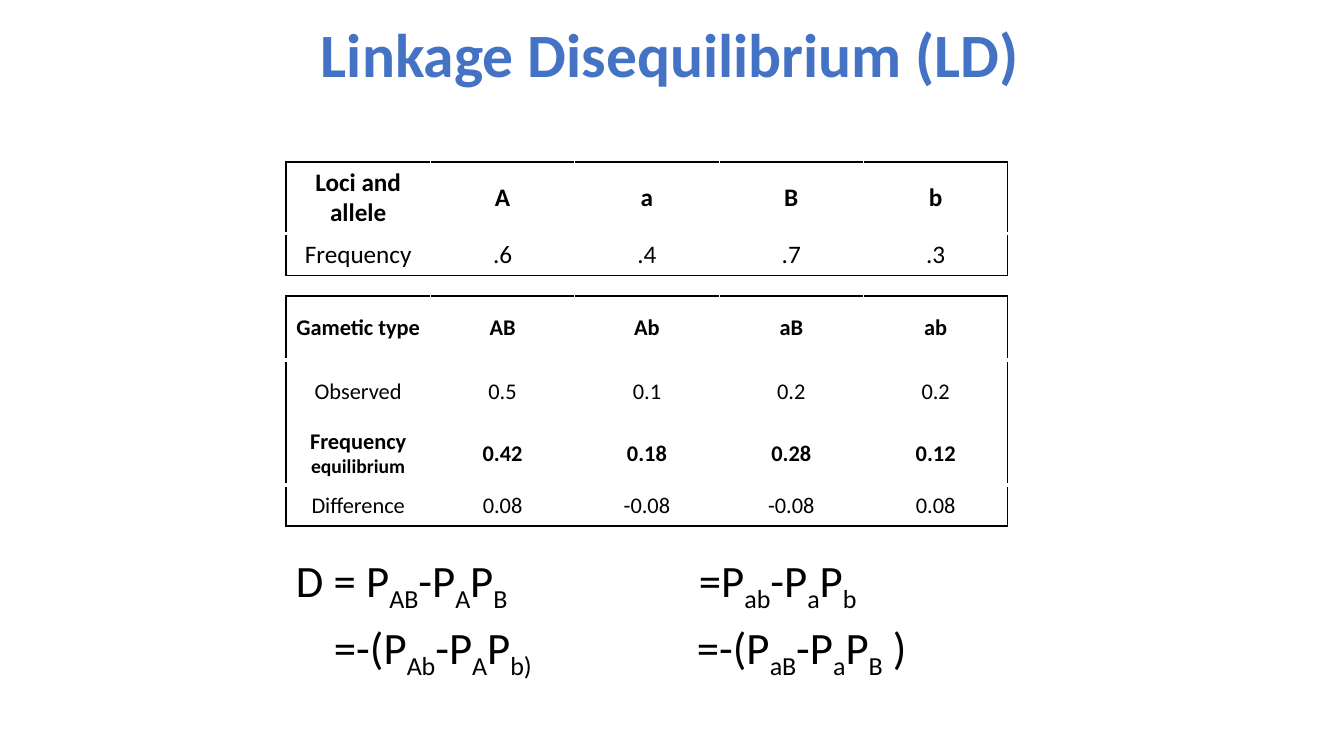
"""Build the linkage disequilibrium slide with its frequency tables and formulas."""
from lxml.etree import SubElement
from pptx import Presentation
from pptx.dml.color import RGBColor
from pptx.enum.text import MSO_ANCHOR, PP_ALIGN
from pptx.oxml.ns import qn
from pptx.util import Emu, Pt

SCALE = 914400 / 100.8
FONT = "Calibri"
COLORS = {"title": "4472C4", "text": "000000", "line": "000000", "gap": "FFFFFF"}

TITLE = "Linkage Disequilibrium (LD)"
TABLE_LEFT, TABLE_WIDTH = 286, 722
TABLES = [
    {"top": 162, "heights": (70, 42), "size": 18, "top_line": True, "bottom_line": True,
     "rows": [("Loci and allele", "A", "a", "B", "b"),
              ("Frequency", ".6", ".4", ".7", ".3")]},
    {"top": 296, "heights": (64, 64), "size": 16, "top_line": True, "bottom_line": False,
     "rows": [("Gametic type", "AB", "Ab", "aB", "ab"),
              ("Observed", "0.5", "0.1", "0.2", "0.2")]},
    {"top": 422, "heights": (63, 41), "size": 16, "top_line": False, "bottom_line": True,
     "rows": [("Frequency |equilibrium", "0.42", "0.18", "0.28", "0.12"),
              ("Difference", "0.08", "-0.08", "-0.08", "0.08")]},
]
SMALL_LABEL_SIZE = 14

FORMULAS = [
    {"left": 286, "top": 548, "height": 74, "tab": 403,
     "parts": ("D = P", "AB", "-P", "A", "P", "B", "\t=P", "ab", "-P", "a", "P", "b")},
    {"left": 324, "top": 615, "height": 77, "tab": 363,
     "parts": ("=-(P", "Ab", "-P", "A", "P", "b)", "\t=-(P", "aB", "-P", "a", "P", "B", " )")},
]


def px(length):
    return Emu(round(length * SCALE))


def style(font, size, color, bold=False):
    font.name = FONT
    font.size = Pt(size)
    font.bold = bold
    font.color.rgb = RGBColor.from_string(COLORS[color])


def add_border(cell, side, color, points):
    line = SubElement(cell._tc.get_or_add_tcPr(), qn(f"a:ln{side}"), w=str(Pt(points)))
    fill = SubElement(line, qn("a:solidFill"))
    SubElement(fill, qn("a:srgbClr"), val=COLORS[color])


def add_frequency_table(slide, content):
    rows = content["rows"]
    last_row, last_column = len(rows) - 1, len(rows[0]) - 1
    table = slide.shapes.add_table(
        len(rows), len(rows[0]), px(TABLE_LEFT), px(content["top"]),
        px(TABLE_WIDTH), px(sum(content["heights"]))).table
    table.first_row = table.horz_banding = False
    for column in table.columns:
        column.width = px(TABLE_WIDTH / len(rows[0]))
    for row_index, values in enumerate(rows):
        table.rows[row_index].height = px(content["heights"][row_index])
        for column_index, value in enumerate(values):
            cell = table.cell(row_index, column_index)
            cell.vertical_anchor = MSO_ANCHOR.MIDDLE
            outlined = {
                "L": column_index == 0,
                "R": column_index == last_column,
                "T": row_index == 0 and content["top_line"],
                "B": row_index == last_row and content["bottom_line"],
            }
            for side, black in outlined.items():
                thick = side == "B" and row_index == 0
                add_border(cell, side, "line" if black else "gap", 3 if thick else 1)
            cell.fill.background()
            paragraph = cell.text_frame.paragraphs[0]
            paragraph.alignment = PP_ALIGN.CENTER
            style(paragraph.font, content["size"], "text", row_index == 0)
            label, _, small_label = value.partition("|")
            paragraph.add_run().text = label
            if small_label:
                run = paragraph.add_run()
                run.text = small_label
                run.font.size = Pt(SMALL_LABEL_SIZE)


def add_formula(slide, content):
    box = slide.shapes.add_textbox(
        px(content["left"]), px(content["top"]), px(TABLE_WIDTH), px(content["height"]))
    box.text_frame.word_wrap = True
    paragraph = box.text_frame.paragraphs[0]
    paragraph.space_before = Pt(6.4)
    tabs = SubElement(paragraph._p.get_or_add_pPr(), qn("a:tabLst"))
    SubElement(tabs, qn("a:tab"), pos=str(px(content["tab"])), algn="l")
    style(paragraph.font, 32, "text")
    for index, part in enumerate(content["parts"]):
        run = paragraph.add_run()
        run.text = part
        if index % 2:
            run.font._element.set("baseline", "-25000")


def main():
    presentation = Presentation()
    presentation.slide_width, presentation.slide_height = px(1344), px(756)
    slide = presentation.slides.add_slide(presentation.slide_layouts[5])

    title = slide.shapes.title
    title.left, title.top, title.width, title.height = px(217), px(0), px(907), px(115)
    title.text_frame.text = TITLE
    title.text_frame.vertical_anchor = MSO_ANCHOR.MIDDLE
    paragraph = title.text_frame.paragraphs[0]
    paragraph.alignment = PP_ALIGN.CENTER
    paragraph.line_spacing = 0.9
    style(paragraph.font, 44, "title", True)

    for content in TABLES:
        add_frequency_table(slide, content)
    for content in FORMULAS:
        add_formula(slide, content)
    presentation.save("out.pptx")


if __name__ == "__main__":
    main()
